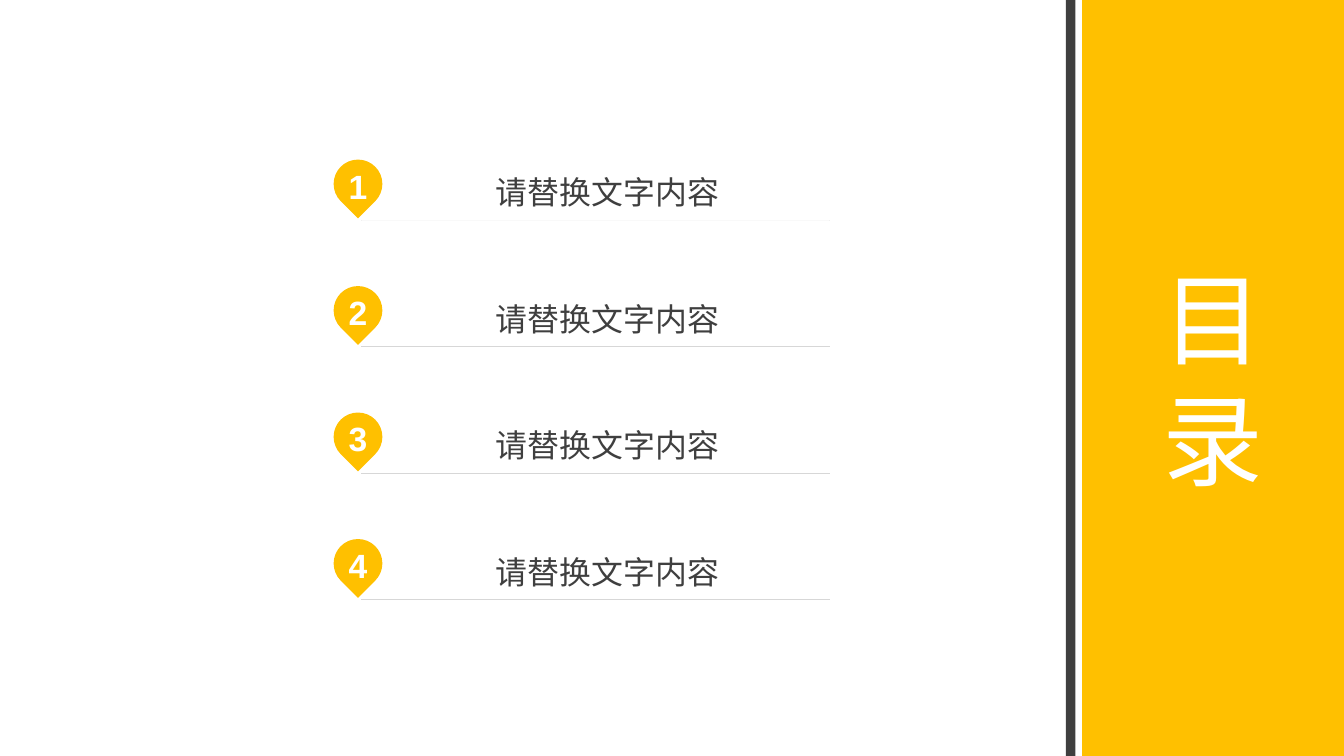
import math

import pptx
import pptx.dml.color
import pptx.enum.shapes
import pptx.enum.text
import pptx.oxml.ns
import pptx.util

ENTRIES = ["请替换文字内容"] * 4
TITLE = ["目", "录"]
YELLOW, DARK, RULE, WHITE = "FFC000", "3F3F3F", "D7D7D7", "FFFFFF"
FONT = "Arial"

WIDTH, HEIGHT = 14.06, 7.91
PANEL_LEFT, BAR_LEFT, BAR_TOP, BAR_WIDTH = 11.32, 11.15, -0.02, 0.1
PIN_LEFT, PIN_TOP, PIN_SIZE = 3.49, 1.67, 0.51
PIN_ARCS = [(135, 180), (180, 270), (270, 360), (360, 405)]
ENTRY_LEFT, ENTRY_TOP, ENTRY_WIDTH, ENTRY_HEIGHT = 3.78, 1.68, 4.9, 0.62
LAST_ENTRY_TOP = 5.65
PITCH = (LAST_ENTRY_TOP - ENTRY_TOP) / (len(ENTRIES) - 1)

inch = pptx.util.Inches


def color(value):
    return pptx.dml.color.RGBColor.from_string(value)


def paint(shape, fill):
    shape.shadow.inherit = False
    shape.fill.solid()
    shape.fill.fore_color.rgb = color(fill)
    shape.line.fill.background()


def write(shape, lines, size, ink, bold=False, spacing=None, insets=(0.1, 0.05, 0.1, 0.05)):
    frame = shape.text_frame
    frame.word_wrap = True
    frame.vertical_anchor = pptx.enum.text.MSO_ANCHOR.MIDDLE
    frame.margin_left, frame.margin_top, frame.margin_right, frame.margin_bottom = map(inch, insets)
    for index, line in enumerate(lines):
        para = frame.add_paragraph() if index else frame.paragraphs[0]
        para.alignment = pptx.enum.text.PP_ALIGN.CENTER
        para.line_spacing = spacing
        span = para.add_run()
        span.text = line
        span.font.name = FONT
        span.font.size = pptx.util.Pt(size)
        span.font.bold = bold
        span.font.color.rgb = color(ink)


def add_rectangle(page, left, top, width, fill):
    box = page.shapes.add_shape(
        pptx.enum.shapes.MSO_SHAPE.RECTANGLE,
        inch(left), inch(top), inch(width), inch(HEIGHT - top))
    paint(box, fill)
    return box


def arc_points(start, end):
    first, last = math.radians(start), math.radians(end)
    pull = 4 / 3 * math.tan((last - first) / 4)
    return [
        (math.cos(first) - pull * math.sin(first), math.sin(first) + pull * math.cos(first)),
        (math.cos(last) + pull * math.sin(last), math.sin(last) - pull * math.cos(last)),
        (math.cos(last), math.sin(last)),
    ]


def bend(shape):
    segments = shape._element.findall(".//" + pptx.oxml.ns.qn("a:lnTo"))[1:]
    for index in range(0, len(segments), 3):
        group = segments[index:index + 3]
        curve = group[0].makeelement(pptx.oxml.ns.qn("a:cubicBezTo"), {})
        group[0].addprevious(curve)
        for segment in group:
            curve.append(segment[0])
            segment.getparent().remove(segment)


def add_pin(page, top, number):
    radius = PIN_SIZE / 2
    corner = math.sqrt(0.5)
    outline = [(0, math.sqrt(2)), (-corner, corner)]
    for start, end in PIN_ARCS:
        outline += arc_points(start, end)
    points = [(inch(PIN_LEFT + radius * (1 + x)), inch(top + radius * (1 + y)))
              for x, y in outline]
    builder = page.shapes.build_freeform(*points[0])
    builder.add_line_segments(points[1:], close=True)
    pin = builder.convert_to_shape()
    bend(pin)
    paint(pin, YELLOW)
    write(pin, [str(number)], 25.3, WHITE, bold=True, insets=(0.1, 0.05, 0.1, 0.12))


def add_entry(page, top, wording):
    corner = (inch(ENTRY_LEFT), inch(top))
    start = (inch(ENTRY_LEFT), inch(top + ENTRY_HEIGHT))
    end = (inch(ENTRY_LEFT + ENTRY_WIDTH), start[1])
    builder = page.shapes.build_freeform(*start)
    builder.add_line_segments([end, start], close=True)
    builder.move_to(*corner)
    builder.add_line_segments([corner, corner], close=True)
    entry = builder.convert_to_shape()
    entry.shadow.inherit = False
    entry.fill.background()
    entry.line.color.rgb = color(RULE)
    entry.line.width = pptx.util.Pt(0.25)
    write(entry, [wording], 24, DARK, spacing=1.2, insets=(0.25, 0, 0, 0.04))


def main():
    deck = pptx.Presentation()
    deck.slide_width, deck.slide_height = inch(WIDTH), inch(HEIGHT)
    page = deck.slides.add_slide(deck.slide_layouts[6])
    for index, wording in enumerate(ENTRIES):
        add_pin(page, PIN_TOP + index * PITCH, index + 1)
        add_entry(page, ENTRY_TOP + index * PITCH, wording)
    panel = add_rectangle(page, PANEL_LEFT, 0, WIDTH - PANEL_LEFT, YELLOW)
    write(panel, TITLE, 75.9, WHITE)
    add_rectangle(page, BAR_LEFT, BAR_TOP, BAR_WIDTH, DARK)
    deck.save("out.pptx")


if __name__ == "__main__":
    main()
